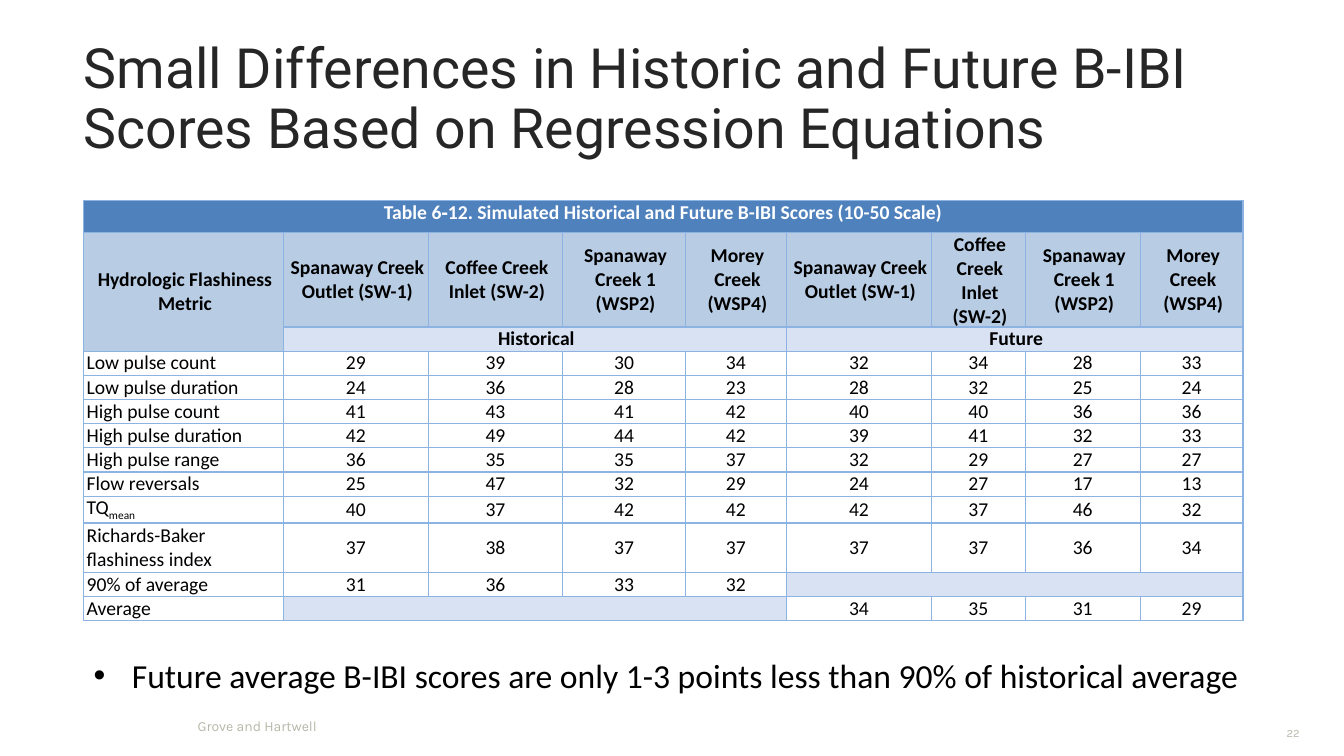
import pptx
import pptx.dml.color
import pptx.enum.text
import pptx.oxml
import pptx.oxml.ns
import pptx.util

Inches = pptx.util.Inches
Pt = pptx.util.Pt
ALIGN = pptx.enum.text.PP_ALIGN
ANCHOR = pptx.enum.text.MSO_ANCHOR
COLORS = {
    "title": "262626", "footer": "B7B7A9", "text": "000000", "white": "FFFFFF",
    "banner": "4F81BD", "header": "B8CCE4", "shade": "D9E2F3", "border": "8DB3E2",
}
COLUMN_WIDTHS = [1.98, 1.44, 1.33, 1.22, 1, 1.44, 0.93, 1.14, 1.02]
ROW_HEIGHTS = [0.32, 0.73] + [0.24] * 8 + [0.49] + [0.24] * 2
SITES_HISTORICAL = ["Spanaway Creek Outlet (SW-1)", "Coffee Creek Inlet (SW-2)",
                    "Spanaway Creek 1 (WSP2)", "Morey Creek (WSP4)"]
SCORES = [
    ("Low pulse count", [29, 39, 30, 34, 32, 34, 28, 33]),
    ("Low pulse duration", [24, 36, 28, 23, 28, 32, 25, 24]),
    ("High pulse count", [41, 43, 41, 42, 40, 40, 36, 36]),
    ("High pulse duration", [42, 49, 44, 42, 39, 41, 32, 33]),
    ("High pulse range", [36, 35, 35, 37, 32, 29, 27, 27]),
    ("Flow reversals", [25, 47, 32, 29, 24, 27, 17, 13]),
    ("TQ", [40, 37, 42, 42, 42, 37, 46, 32]),
    ("Richards-Baker flashiness index", [37, 38, 37, 37, 37, 37, 36, 34]),
    ("90% of average", [31, 36, 33, 32] + [None] * 4),
    ("Average", [None] * 4 + [34, 35, 31, 29]),
]


def xml_element(tag, parent, **attributes):
    element = pptx.oxml.ns.qn(tag)
    child = parent.makeelement(element, attributes)
    parent.append(child)
    return child


def write_text(frame, text, size=14, font="Calibri", color="text", bold=False,
               align=ALIGN.LEFT, line_spacing=None, margin=0, hanging=0,
               bullet=None, subscript=None):
    paragraph = frame.paragraphs[0]
    properties = paragraph._p.get_or_add_pPr()
    if margin:
        properties.set("marL", str(Inches(margin)))
        properties.set("indent", str(-Inches(hanging)))
    if bullet:
        xml_element("a:buFont", properties, typeface="Arial")
        xml_element("a:buChar", properties, char=bullet)
    paragraph.alignment = align
    if line_spacing:
        paragraph.line_spacing = line_spacing
    for part in filter(None, (text, subscript)):
        run = paragraph.add_run()
        run.text = part
        run.font.size = Pt(size)
        run.font.name = font
        run.font.bold = bold
        run.font.color.rgb = pptx.dml.color.RGBColor.from_string(COLORS[color])
        if part == subscript:
            run.font._element.set("baseline", "-25000")
    xml_element("a:endParaRPr", paragraph._p, sz=str(int(size * 100)))


class ScoreSlide:
    """Holds the slide and draws its text boxes and score table."""

    def __init__(self, presentation):
        self.slide = presentation.slides.add_slide(presentation.slide_layouts[6])

    def text_box(self, text, left, top, width, height, inset=0, wrap=True, **style):
        box = self.slide.shapes.add_textbox(
            Inches(left), Inches(top), Inches(width), Inches(height))
        frame = box.text_frame
        frame.word_wrap = wrap
        frame.vertical_anchor = ANCHOR.MIDDLE
        frame.margin_left = frame.margin_right = Inches(inset)
        write_text(frame, text, **style)

    def border(self, cell):
        properties = cell._tc.get_or_add_tcPr()
        for position, side in enumerate(("a:lnL", "a:lnR", "a:lnT", "a:lnB")):
            line = xml_element(side, properties, w=str(Pt(1)))
            fill = xml_element("a:solidFill", line)
            xml_element("a:srgbClr", fill, val=COLORS["border"])
            properties.insert(position, line)

    def cell(self, row, column, text="", fill=None, span=(1, 1),
             anchor=ANCHOR.MIDDLE, **style):
        cell = self.table.cell(row, column)
        if span != (1, 1):
            cell.merge(self.table.cell(row + span[0] - 1, column + span[1] - 1))
        cell.vertical_anchor = anchor
        if fill:
            cell.fill.solid()
            cell.fill.fore_color.rgb = pptx.dml.color.RGBColor.from_string(COLORS[fill])
        write_text(cell.text_frame, text, **style)

    def score_table(self, left, top):
        frame = self.slide.shapes.add_table(
            len(ROW_HEIGHTS), len(COLUMN_WIDTHS), Inches(left), Inches(top),
            Inches(sum(COLUMN_WIDTHS)), Inches(sum(ROW_HEIGHTS)))
        self.table = frame.table
        self.table.first_row = self.table.horz_banding = False
        for column, width in zip(self.table.columns, COLUMN_WIDTHS):
            column.width = Inches(width)
        for row, height in zip(self.table.rows, ROW_HEIGHTS):
            row.height = Inches(height)
        for cell in self.table.iter_cells():
            cell.margin_left = cell.margin_right = Inches(0.03)
            cell.margin_top = cell.margin_bottom = 0
            cell.fill.background()
            self.border(cell)
        self.headings()
        for row, (metric, scores) in enumerate(SCORES, start=3):
            self.cell(row, 0, metric, subscript="mean" if metric == "TQ" else None)
            for column, score in enumerate(scores, start=1):
                if score is not None:
                    self.cell(row, column, str(score), align=ALIGN.CENTER)
            if None in scores:
                self.cell(row, scores.index(None) + 1, fill="shade", span=(1, 4))

    def headings(self):
        heading = {"bold": True, "align": ALIGN.CENTER}
        self.cell(0, 0, "Table 6‑12. Simulated Historical and Future B-IBI Scores (10-50 Scale)",
                  fill="banner", span=(1, 9), anchor=ANCHOR.TOP, color="white", **heading)
        heading["margin"] = 0.03
        self.cell(1, 0, "Hydrologic Flashiness Metric", fill="header", span=(2, 1), **heading)
        for column, site in enumerate(SITES_HISTORICAL * 2, start=1):
            self.cell(1, column, site, fill="header", **heading)
        for column, period in ((1, "Historical"), (5, "Future")):
            self.cell(2, column, period, fill="shade", span=(1, 4), **heading)


def main():
    presentation = pptx.Presentation()
    presentation.slide_width = Inches(13.33)
    presentation.slide_height = Inches(7.5)
    page = ScoreSlide(presentation)
    page.text_box("Small Differences in Historic and Future B-IBI Scores Based on Regression Equations",
                  0.83, 0.5, 12.19, 1, size=39.6, font="Roboto", color="title", line_spacing=0.9)
    footer = {"font": "Karla", "color": "footer"}
    page.text_box("Grove and Hartwell", 1.96, 7.09, 8.83, 0.23, size=10, **footer)
    page.text_box("22", 12.33, 7.15, 0.56, 0.25, size=8, align=ALIGN.RIGHT, **footer)
    page.score_table(0.83, 1.99)
    page.text_box("Future average B-IBI scores are only 1-3 points less than 90% of historical average",
                  0.83, 6.45, 11.73, 0.5, inset=0.1, wrap=False, size=24,
                  margin=0.38, hanging=0.38, bullet="•")
    presentation.save("out.pptx")


if __name__ == "__main__":
    main()
